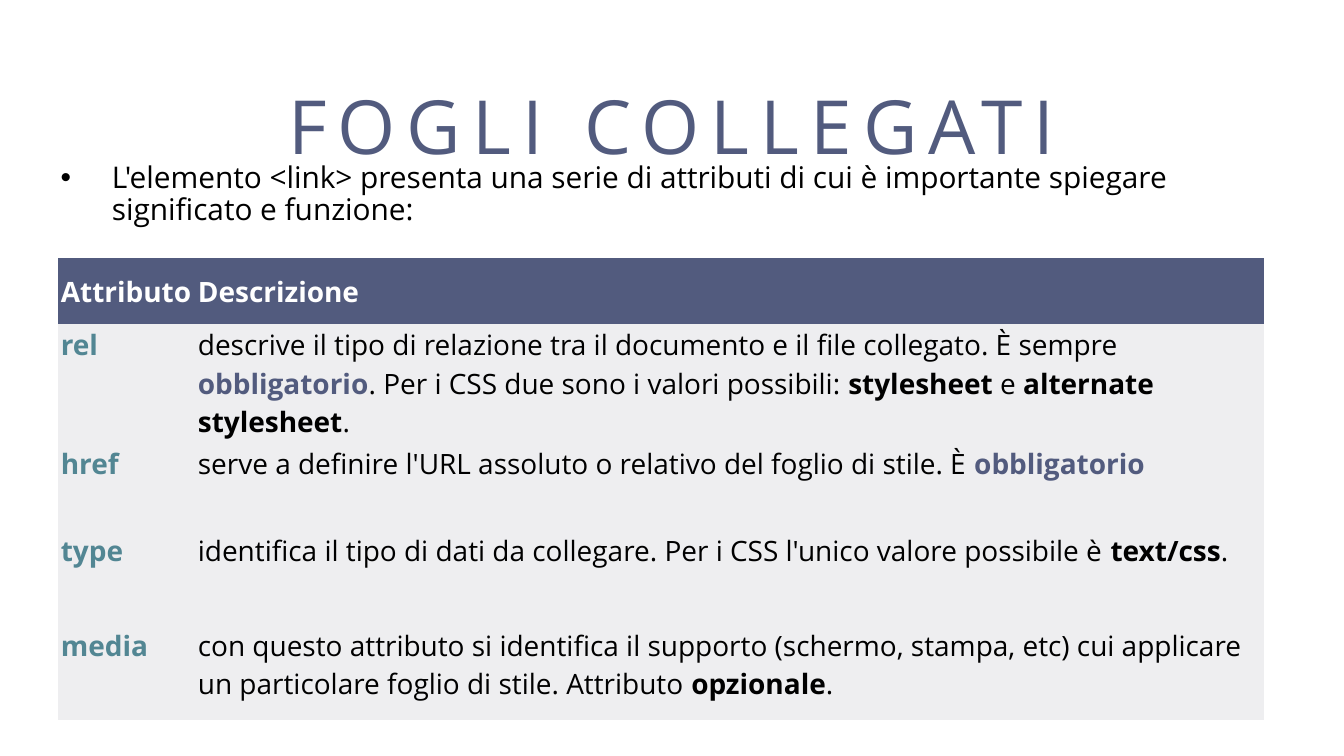
from pptx import Presentation
from pptx.dml.color import RGBColor
from pptx.enum.text import MSO_ANCHOR as Anchor, MSO_AUTO_SIZE as Fit, PP_ALIGN as Align
from pptx.util import Cm, Pt

FONT = "Open Sans"
NAVY = RGBColor(0x52, 0x5B, 0x7E)
TEAL = RGBColor(0x52, 0x86, 0x93)
PALE = RGBColor(0xEE, 0xEE, 0xF0)
BLACK = RGBColor(0, 0, 0)
WHITE = RGBColor(0xFF, 0xFF, 0xFF)
PLAIN_STYLE = "{2D5ABB26-0587-4C30-8999-92F81FD0307C}"

# Asterisks enclose bold words
ROWS = [
    ("rel", "descrive il tipo di relazione tra il documento e il file collegato. "
            "È sempre *obbligatorio*. Per i CSS due sono i valori possibili: "
            "*stylesheet *e *alternate stylesheet*."),
    ("href", "serve a definire l'URL assoluto o relativo del foglio di stile. "
             "È *obbligatorio*"),
    ("type", "identifica il tipo di dati da collegare. Per i CSS l'unico valore "
             "possibile è *text/css*."),
    ("media", "con questo attributo si identifica il supporto (schermo, stampa, etc) "
              "cui applicare un particolare foglio di stile. Attributo *opzionale*."),
]
WIDTHS = [2.59, 20.19]
HEIGHTS = [1.25, 1.96, 1.65, 1.8, 1.8]


def place(shape, box):
    shape.left, shape.top, shape.width, shape.height = (Cm(n) for n in box)


def style(par, size, color):
    font = par.font
    font.name, font.size = FONT, Pt(size)
    font.color.rgb = color


def add_title(slide, box, text):
    title = slide.shapes.title
    place(title, box)
    frame = title.text_frame
    frame.text = text
    frame.auto_size = Fit.NONE
    frame.vertical_anchor = Anchor.MIDDLE
    par = frame.paragraphs[0]
    par.alignment = Align.CENTER
    style(par, 40, NAVY)
    # Letter spacing, in hundredths of a point
    par.runs[0].font._element.set("spc", "600")


def add_intro(slide, box, text):
    body = slide.placeholders[1]
    place(body, box)
    frame = body.text_frame
    frame.text = text
    frame.auto_size = Fit.NONE
    par = frame.paragraphs[0]
    par.line_spacing = 0.9
    par.space_before = Pt(0)
    # Hanging indent for the bullet
    props = par._p.get_or_add_pPr()
    props.set("marL", str(Cm(0.97)))
    props.set("indent", str(-Cm(0.97)))
    style(par, 16, BLACK)


def fill_cell(cell, text, color, back, bold=False):
    cell.margin_left = cell.margin_right = Cm(0.05)
    cell.margin_top = cell.margin_bottom = Cm(0.03)
    cell.fill.solid()
    cell.fill.fore_color.rgb = back
    par = cell.text_frame.paragraphs[0]
    style(par, 15, color)
    for i, part in enumerate(text.split("*")):
        if part:
            run = par.add_run()
            run.text = part
            run.font.bold = bold or i % 2 == 1
            if part == "obbligatorio":
                run.font.color.rgb = NAVY


def add_grid(slide, box):
    frame = slide.shapes.add_table(len(HEIGHTS), len(WIDTHS), *(Cm(n) for n in box))
    table = frame.table
    table._tbl.tblPr.find("{*}tableStyleId").text = PLAIN_STYLE
    for col, width in zip(table.columns, WIDTHS):
        col.width = Cm(width)
    for row, height in zip(table.rows, HEIGHTS):
        row.height = Cm(height)
    # Header
    for c, text in enumerate(("Attributo", "Descrizione")):
        cell = table.cell(0, c)
        fill_cell(cell, text, WHITE, NAVY, bold=True)
        cell.vertical_anchor = Anchor.MIDDLE
    # Attributes
    for r, (name, text) in enumerate(ROWS, 1):
        fill_cell(table.cell(r, 0), name, TEAL, PALE, bold=True)
        fill_cell(table.cell(r, 1), text, BLACK, PALE)


def main():
    deck = Presentation()
    deck.slide_width, deck.slide_height = Cm(25.4), Cm(14.29)
    slide = deck.slides.add_slide(deck.slide_layouts[1])
    add_title(slide, (1.27, 1.3, 22.86, 2.11), "FOGLI COLLEGATI")
    add_intro(slide, (0.89, 2.95, 23.39, 1.8),
              "L'elemento <link> presenta una serie di attributi di cui è "
              "importante spiegare significato e funzione:")
    add_grid(slide, (1.1, 4.88, sum(WIDTHS), sum(HEIGHTS)))
    deck.save("out.pptx")


if __name__ == "__main__":
    main()
